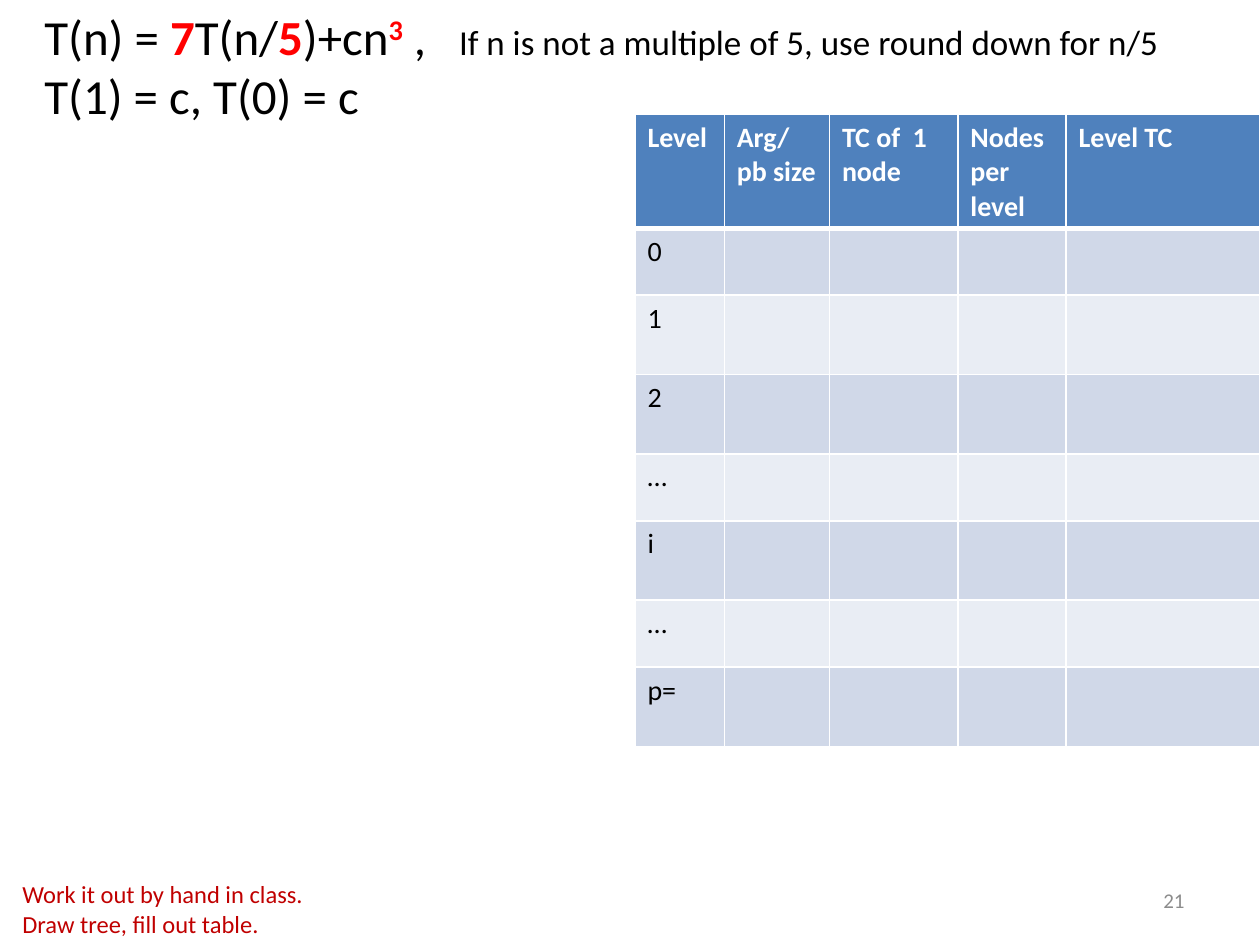
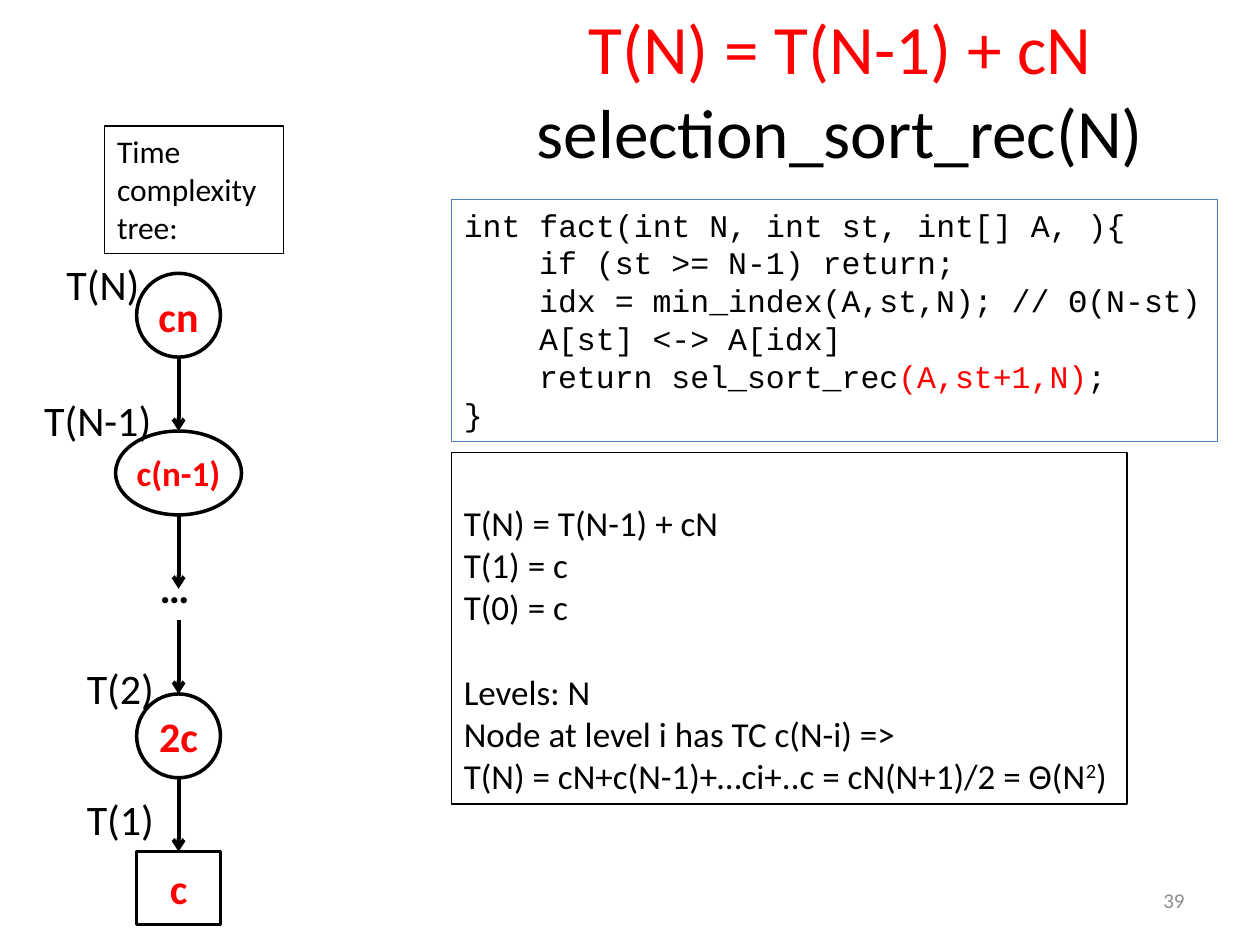
from dataclasses import dataclass

from lxml.etree import SubElement
from pptx import Presentation
from pptx.dml.color import RGBColor
from pptx.enum.shapes import MSO_CONNECTOR, MSO_SHAPE
from pptx.enum.text import MSO_ANCHOR, MSO_AUTO_SIZE, PP_ALIGN
from pptx.oxml.ns import qn
from pptx.util import Cm, Pt

TITLE_ONLY = 5


@dataclass(frozen=True)
class Theme:
    font: str = "Calibri"
    code_font: str = "Courier New"
    black: RGBColor = RGBColor(0x00, 0x00, 0x00)
    white: RGBColor = RGBColor(0xFF, 0xFF, 0xFF)
    red: RGBColor = RGBColor(0xFF, 0x00, 0x00)
    dark_red: RGBColor = RGBColor(0xC0, 0x00, 0x00)
    grey: RGBColor = RGBColor(0x8C, 0x8C, 0x8C)
    blue: RGBColor = RGBColor(0x4F, 0x81, 0xBD)
    bands: tuple = (RGBColor(0xD0, 0xD8, 0xE8), RGBColor(0xE9, 0xED, 0xF4))
    title: float = 39.6
    recurrence: int = 28
    label: int = 24
    body: int = 20
    caption: int = 18
    table: int = 16
    note: int = 14
    number: int = 12


@dataclass(frozen=True)
class Run:
    """A piece of text and what sets it apart from its paragraph."""
    text: str
    color: RGBColor = None
    size: float = None
    bold: bool = None
    superscript: bool = False


class Deck:
    def __init__(self, theme):
        self.theme = theme
        self.presentation = Presentation()
        self.presentation.slide_width = Cm(25.4)
        self.presentation.slide_height = Cm(19.05)
        self.slide = None

    def new_slide(self, number):
        layout = self.presentation.slide_layouts[TITLE_ONLY]
        self.slide = self.presentation.slides.add_slide(layout)
        self.text(18.21, 17.65, 5.92, 1.01, [str(number)], self.theme.number,
                  color=self.theme.grey, align=PP_ALIGN.RIGHT,
                  anchor=MSO_ANCHOR.MIDDLE, wrap=True)

    def fill_text(self, frame, paragraphs, size, color=None, bold=False,
                  font=None, align=PP_ALIGN.LEFT):
        """Each paragraph is a string or a list of strings and Runs."""
        for index, parts in enumerate(paragraphs):
            paragraph = frame.paragraphs[0] if index == 0 else frame.add_paragraph()
            paragraph.alignment = align
            for part in [parts] if isinstance(parts, str) else parts:
                piece = Run(part) if isinstance(part, str) else part
                if piece.text == "\n":
                    paragraph.add_line_break()
                    continue
                run = paragraph.add_run()
                run.text = piece.text
                run.font.name = font or self.theme.font
                run.font.size = Pt(piece.size or size)
                run.font.bold = bold if piece.bold is None else piece.bold
                run.font.color.rgb = piece.color or color or self.theme.black
                if piece.superscript:
                    run.font._element.set("baseline", "30000")

    def title(self, left, top, width, height, parts, size, align):
        heading = self.slide.shapes.title
        heading.left, heading.top = Cm(left), Cm(top)
        heading.width, heading.height = Cm(width), Cm(height)
        frame = heading.text_frame
        frame.word_wrap = True
        frame.auto_size = MSO_AUTO_SIZE.NONE
        frame.vertical_anchor = MSO_ANCHOR.MIDDLE
        self.fill_text(frame, [parts], size, align=align)
        return frame.paragraphs[0]

    def text(self, left, top, width, height, paragraphs, size,
             anchor=MSO_ANCHOR.TOP, wrap=False, **style):
        box = self.slide.shapes.add_textbox(
            Cm(left), Cm(top), Cm(width), Cm(height))
        frame = box.text_frame
        frame.word_wrap = wrap
        frame.vertical_anchor = anchor
        self.fill_text(frame, paragraphs, size, **style)
        return box

    def framed_text(self, left, top, width, height, paragraphs, size,
                    border=None, **style):
        box = self.text(left, top, width, height, paragraphs, size,
                        wrap=True, **style)
        box.line.color.rgb = border or self.theme.black
        box.line.width = Pt(0.75)
        return box.text_frame

    def node(self, kind, center, top, width, height, cost, size):
        node = self.slide.shapes.add_shape(
            kind, Cm(center - width / 2), Cm(top), Cm(width), Cm(height))
        node.shadow.inherit = False
        node.fill.background()
        node.line.color.rgb = self.theme.black
        node.line.width = Pt(2)
        frame = node.text_frame
        frame.margin_left = frame.margin_right = 0
        frame.word_wrap = True
        frame.vertical_anchor = MSO_ANCHOR.MIDDLE
        self.fill_text(frame, [cost], size, self.theme.red, bold=True,
                       align=PP_ALIGN.CENTER)

    def down_arrow(self, x, top, length):
        arrow = self.slide.shapes.add_connector(
            MSO_CONNECTOR.STRAIGHT, Cm(x), Cm(top), Cm(x), Cm(top + length))
        arrow.line.color.rgb = self.theme.black
        arrow.line.width = Pt(2.25)
        SubElement(arrow.line._get_or_add_ln(), qn("a:tailEnd"), type="arrow")
        SubElement(arrow._element.spPr, qn("a:effectLst"))

    def cell_borders(self, cell, top, bottom):
        properties = cell._tc.get_or_add_tcPr()
        sides = (("a:lnL", 1), ("a:lnR", 1), ("a:lnT", top), ("a:lnB", bottom))
        for index, (side, points) in enumerate(sides):
            line = SubElement(properties, qn(side), w=str(Pt(points)))
            fill = SubElement(line, qn("a:solidFill"))
            SubElement(fill, qn("a:srgbClr"), val=str(self.theme.white))
            properties.insert(index, line)

    def table(self, left, top, widths, heights, header, first_column):
        theme = self.theme
        grid = self.slide.shapes.add_table(
            len(heights), len(widths), Cm(left), Cm(top),
            Cm(sum(widths)), Cm(sum(heights))).table
        grid.horz_banding = False
        for column, width in zip(grid.columns, widths):
            column.width = Cm(width)
        for row, height in zip(grid.rows, heights):
            row.height = Cm(height)
        for r in range(len(heights)):
            for c in range(len(widths)):
                cell = grid.cell(r, c)
                cell.fill.solid()
                cell.fill.fore_color.rgb = theme.bands[(r - 1) % 2] if r else theme.blue
                self.cell_borders(cell, top=3 if r == 1 else 1,
                                  bottom=1 if r else 3)
                if r == 0:
                    self.fill_text(cell.text_frame, header[c], theme.table,
                                   theme.white, bold=True)
                elif c == 0:
                    self.fill_text(cell.text_frame, [first_column[r - 1]],
                                   theme.table)


def build_exercise(deck):
    theme = deck.theme
    deck.new_slide(21)

    # Recurrence, with the remark set off by a tab stop
    recurrence = deck.title(
        0.64, 0.2, 23.93, 2.24,
        ["T(n) = ", Run("7", theme.red, bold=True), "T(n/",
         Run("5", theme.red, bold=True), ")+cn",
         Run("3", theme.red, bold=True, superscript=True), " ,\t",
         Run("If n is not a multiple of 5, use round down for n/5", size=theme.body),
         Run("\n"), "T(1) = c, T(0) = c"],
        theme.recurrence, PP_ALIGN.LEFT)
    tabs = SubElement(recurrence._p.get_or_add_pPr(), qn("a:tabLst"))
    SubElement(tabs, qn("a:tab"), pos=str(Cm(8.36)), algn="l")

    # Level table to fill out
    short, tall = 1.35, 1.6
    deck.table(
        12.8, 2.31, [1.8, 2.12, 2.59, 2.18, 3.91],
        [2.29, short, tall, tall, short, tall, short, tall],
        [["Level"], ["Arg/", "pb size"], ["TC of  1 node"],
         ["Nodes per level"], ["Level TC"]],
        ["0", "1", "2", "…", "i", "…", "p="])

    # Instruction
    deck.text(0.2, 17.6, 6.22, 1.45,
              ["Work it out by hand in class.", "Draw tree, fill out table."],
              theme.note, color=theme.dark_red)


def build_selection_sort(deck):
    theme = deck.theme
    deck.new_slide(39)
    deck.title(9.1, 0.2, 15.67, 3.18,
               [Run("T(N) = T(N-1) + cN", theme.red), Run("\n"),
                "selection_sort_rec(N)"], theme.title, PP_ALIGN.CENTER)

    # Time complexity tree
    deck.framed_text(2.11, 2.54, 3.61, 2.57, ["Time complexity tree:"],
                     theme.caption)
    trunk, node_height, arrow_length = 3.6, 1.69, 1.49
    step = node_height + arrow_length
    top, lower_top = 5.51, 13.99
    circle, square = MSO_SHAPE.OVAL, MSO_SHAPE.RECTANGLE
    tree = [
        (circle, top, 1.69, node_height, "cn", theme.label),
        (circle, top + step, 2.54, node_height, "c(n-1)", theme.body),
        (circle, lower_top, 1.69, node_height, "2c", theme.label),
        (square, lower_top + step, 1.69, 1.47, "c", theme.label),
    ]
    for kind, node_top, width, height, cost, size in tree:
        deck.node(kind, trunk, node_top, width, height, cost, size)
    for _, node_top, *_ in tree[:3]:
        deck.down_arrow(trunk, node_top + node_height, arrow_length)
    deck.text(2.97, 11.2, 1.12, 1.27, ["…"], theme.label, bold=True)
    deck.down_arrow(trunk, lower_top - arrow_length, arrow_length)

    # Calls beside the nodes
    for call, left, call_top, width in [
            ("T(N)", 1.09, 5.08, 2.03), ("T(N-1)", 0.64, 7.82, 2.69),
            ("T(2)", 1.5, 13.23, 1.88), ("T(1)", 1.5, 15.88, 1.88)]:
        deck.text(left, call_top, width, 1.27, [call], theme.label)

    # Code, its body indented by four characters
    code = deck.framed_text(
        9.1, 4.02, 15.44, 4.88,
        ["int fact(int N, int st, int[] A, ){",
         "if (st >= N-1) return;",
         "idx = min_index(A,st,N); // Θ(N-st)",
         "A[st] <-> A[idx]",
         ["return sel_sort_rec", Run("(A,st+1,N)", theme.red), ";"],
         "}"],
        theme.caption, border=theme.blue, font=theme.code_font)
    for statement in code.paragraphs[1:-1]:
        statement._p.get_or_add_pPr().set("marL", str(Cm(1.52)))

    # Solution, with one line of space above each part
    solution = deck.framed_text(
        9.1, 9.12, 13.62, 7.09,
        ["T(N) = T(N-1) + cN", "T(1) = c", "T(0) = c", "Levels: N",
         "Node at level i has TC c(N-i) =>",
         ["T(N) = cN+c(N-1)+…ci+..c = cN(N+1)/2 = Θ(N",
          Run("2", superscript=True), ")"]],
        theme.body)
    solution.margin_top = Cm(0.99)
    solution.paragraphs[3].space_before = Pt(24.4)


def main():
    deck = Deck(Theme())
    build_exercise(deck)
    build_selection_sort(deck)
    deck.presentation.save("out.pptx")


if __name__ == "__main__":
    main()
